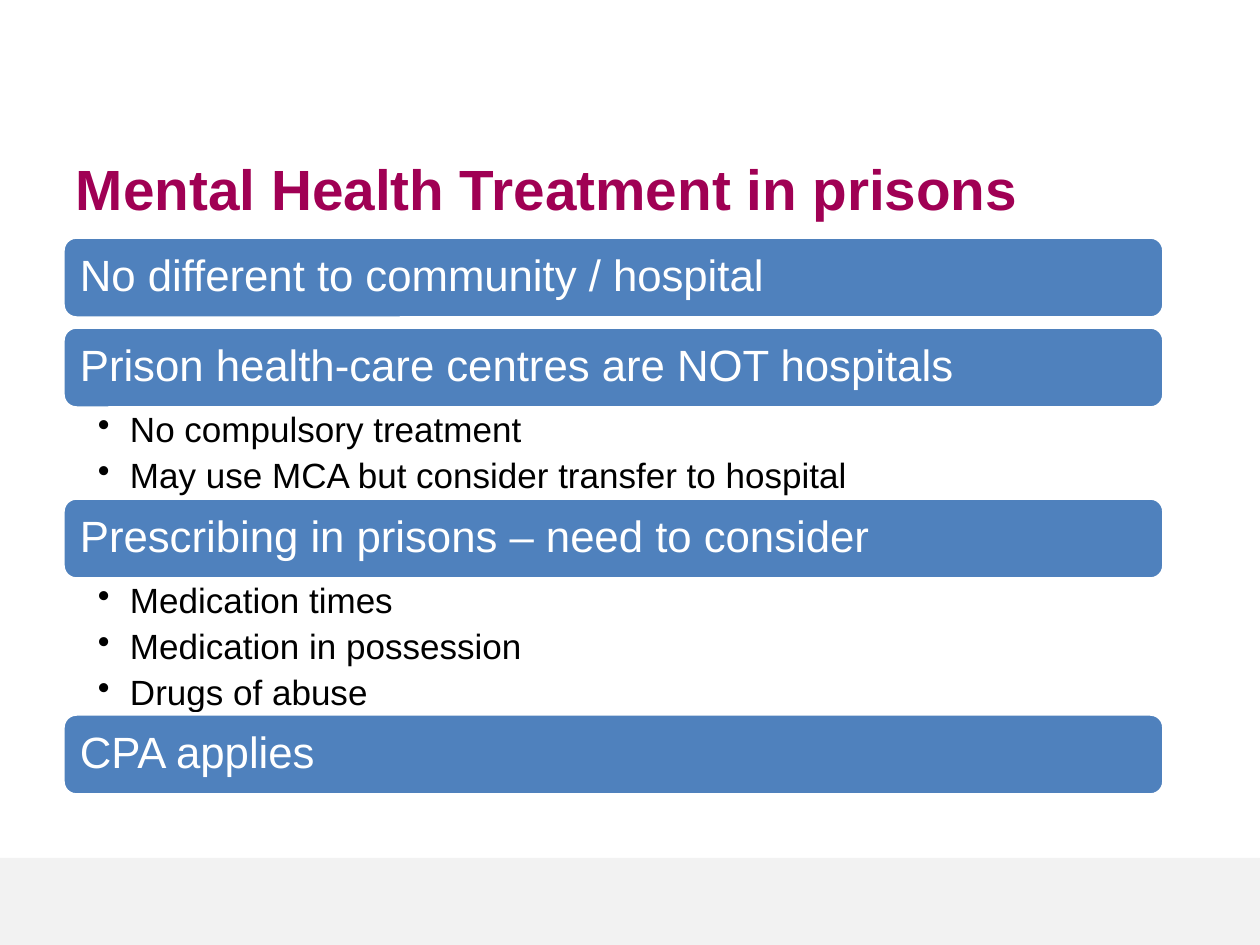
import pptx
import pptx.util
import pptx.dml.color
import pptx.enum.shapes
import pptx.enum.text
from lxml import etree

PX = 914400 // 126
RGBColor = pptx.dml.color.RGBColor
WHITE = RGBColor(0xFF, 0xFF, 0xFF)
BLACK = RGBColor(0, 0, 0)
BLUE = RGBColor(0x4F, 0x81, 0xBD)
MAGENTA = RGBColor(0xA0, 0x00, 0x54)
GREY = RGBColor(0xF2, 0xF2, 0xF2)
SHAPES = pptx.enum.shapes.MSO_SHAPE
MIDDLE = pptx.enum.text.MSO_ANCHOR.MIDDLE
LEFT = pptx.enum.text.PP_ALIGN.LEFT

BAR_LEFT, BAR_WIDTH, BAR_HEIGHT = 63, 1101, 81
BAR_GAP, BULLET_HEIGHT, BULLET_INDENT = 9, 45, 32

SECTIONS = [
    ("No different to community / hospital", []),
    ("Prison health-care centres are NOT hospitals",
     ["No compulsory treatment", "May use MCA but consider transfer to hospital"]),
    ("Prescribing in prisons – need to consider",
     ["Medication times", "Medication in possession", "Drugs of abuse"]),
    ("CPA applies", []),
]


def set_frame(box, left, top, right, bottom):
    frame = box.text_frame
    frame.word_wrap = True
    frame.margin_left, frame.margin_top = left * PX, top * PX
    frame.margin_right, frame.margin_bottom = right * PX, bottom * PX
    return frame


def style_text(para, size, color, bold=False):
    para.alignment = LEFT
    for span in para.runs:
        span.font.name = "Arial"
        span.font.size = pptx.util.Pt(size)
        span.font.bold = bold
        span.font.color.rgb = color


deck = pptx.Presentation()
deck.slide_width, deck.slide_height = 1260 * PX, 945 * PX
page = deck.slides.add_slide(deck.slide_layouts[6])

# Footer band
footer = page.shapes.add_shape(SHAPES.RECTANGLE, 0, 858 * PX, 1260 * PX, 87 * PX)
footer.shadow.inherit = False
footer.fill.solid()
footer.fill.fore_color.rgb = GREY
footer.line.fill.background()

# Title
title = page.shapes.add_textbox(BAR_LEFT * PX, 141 * PX, 1071 * PX, 93 * PX)
frame = set_frame(title, 13, 6, 13, 6)
frame.vertical_anchor = MIDDLE
frame.text = "Mental Health Treatment in prisons"
style_text(frame.paragraphs[0], 32.4, MAGENTA, bold=True)

# Heading bars, each followed by its bullets or a plain gap
top = 237
for heading, bullets in SECTIONS:
    bar = page.shapes.add_shape(SHAPES.ROUNDED_RECTANGLE, BAR_LEFT * PX, top * PX,
                                BAR_WIDTH * PX, BAR_HEIGHT * PX)
    bar.shadow.inherit = False
    bar.fill.solid()
    bar.fill.fore_color.rgb = BLUE
    bar.line.color.rgb = WHITE
    bar.line.width = pptx.util.Pt(2)
    frame = set_frame(bar, 13, 13, 13, 13)
    frame.vertical_anchor = MIDDLE
    frame.text = heading
    frame.paragraphs[0].line_spacing = 0.9
    style_text(frame.paragraphs[0], 25, WHITE)
    top += BAR_HEIGHT

    if not bullets:
        top += BAR_GAP
        continue

    height = BULLET_HEIGHT * len(bullets)
    box = page.shapes.add_textbox(BAR_LEFT * PX, top * PX, BAR_WIDTH * PX, height * PX)
    frame = set_frame(box, 35, 4, 24, 4)
    frame.text = "\n".join(bullets)
    for para in frame.paragraphs:
        para.line_spacing = 0.9
        para.space_after = pptx.util.Pt(4.8)
        properties = para._p.get_or_add_pPr()
        properties.set("marL", str(BULLET_INDENT * PX))
        properties.set("indent", str(-BULLET_INDENT * PX))
        bullet = etree.SubElement(properties, pptx.oxml.ns.qn("a:buChar"))
        bullet.set("char", "•")
        style_text(para, 20, BLACK)
    top += height

deck.save("out.pptx")
